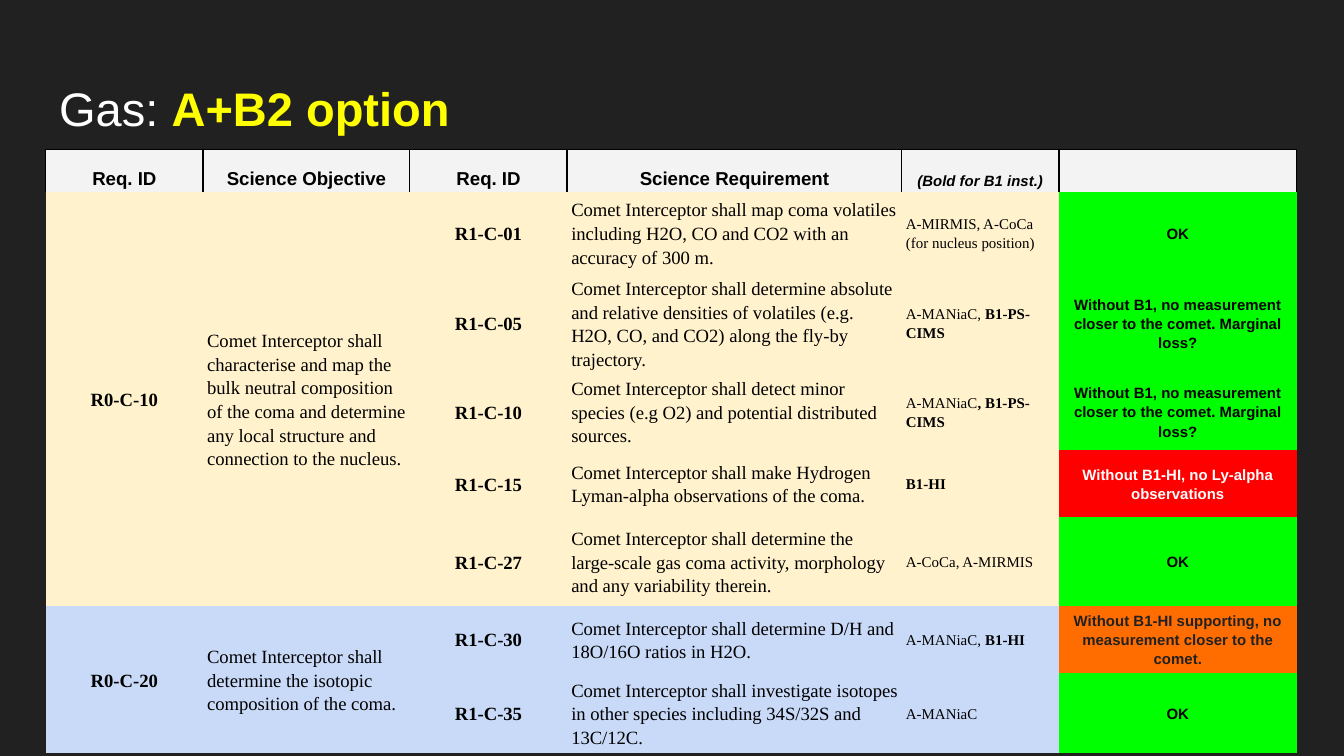
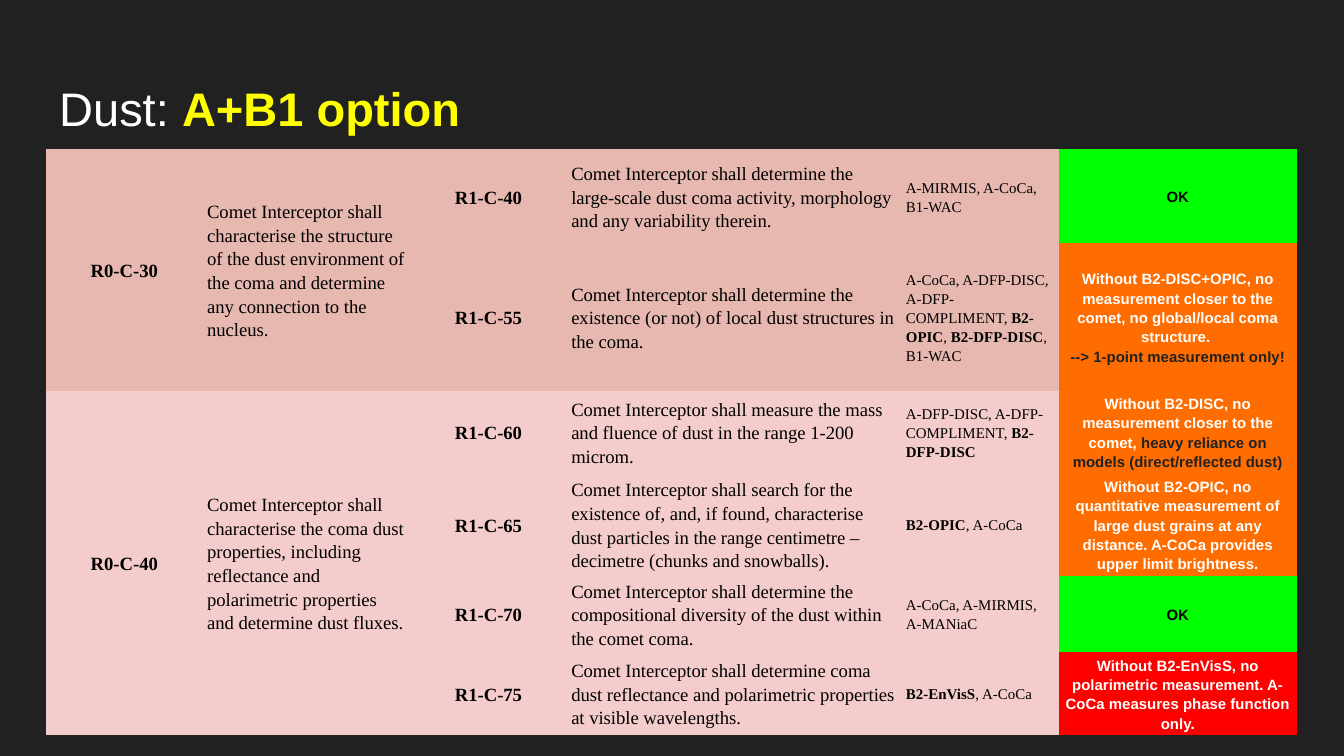
from collections import namedtuple
from dataclasses import dataclass

from lxml import etree
from pptx import Presentation
from pptx import util as u
from pptx.dml import color
from pptx.enum import text
from pptx.oxml import ns

Box = namedtuple("Box", "left top width height")
Style = namedtuple("Style", "font size bold color emphasis_bold emphasis_color align italic", defaults=(False,))
Group = namedtuple("Group", "id objective fill requirements")
Requirement = namedtuple("Requirement", "height id text instruments verdict status")

LEFT, CENTER = text.PP_ALIGN.LEFT, text.PP_ALIGN.CENTER


@dataclass(frozen=True)
class Theme:
    background: str = "212121"
    black: str = "000000"
    white: str = "FFFFFF"
    yellow: str = "FFFF00"
    header: str = "F3F3F3"
    cream: str = "FFF2CC"
    blue: str = "C9DAF8"
    clay: str = "E6B8AF"
    pink: str = "F4CCCC"
    green: str = "00FF00"
    orange: str = "FF6D01"
    red: str = "FF0000"
    sans: str = "Arial"
    serif: str = "Times New Roman"
    title_size: float = 25.2
    body_size: float = 10
    small_size: float = 8
    line_spacing: float = 1.15
    border_width: float = 0.75


THEME = Theme()
SLIDE_WIDTH = 10
SLIDE_HEIGHT = SLIDE_WIDTH * 9 / 16
TITLE_BOX = Box(0.34, 0.49, 9.32, 0.63)
TABLE_BOX = Box(0.34, 1.11, 9.31, 4.29)
COLUMN_WIDTHS = (1.17, 1.54, 1.17, 2.49, 1.17, 1.77)
HEADER_HEIGHT = 0.27
CELL_SIDE_MARGIN = 1 / 32
CELL_END_MARGIN = 1 / 48
HEADINGS = ("Req. ID", "Science Objective", "Req. ID", "Science Requirement", "(Bold for B1 inst.)", "")


def text_style(font, size, bold, align, emphasis_bold=True, ink=THEME.black, emphasis_ink=THEME.black, italic=False):
    return Style(font, size, bold, ink, emphasis_bold, emphasis_ink, align, italic)


TITLE = text_style(THEME.sans, THEME.title_size, False, LEFT, ink=THEME.white, emphasis_ink=THEME.yellow)
HEADING = text_style(THEME.sans, THEME.body_size, True, CENTER)
HEADING_NOTE = text_style(THEME.sans, THEME.small_size, True, CENTER, italic=True)
IDENTIFIER = text_style(THEME.serif, THEME.body_size, True, CENTER)
BODY = text_style(THEME.serif, THEME.body_size, False, LEFT)
INSTRUMENTS = text_style(THEME.serif, THEME.small_size, False, LEFT)
VERDICT_OK = text_style(THEME.sans, THEME.small_size, True, CENTER)
VERDICT_LOSS = VERDICT_OK._replace(color=THEME.white, emphasis_color=THEME.background)

STATUS = {
    "ok": (THEME.green, VERDICT_OK),
    "partial": (THEME.orange, VERDICT_LOSS),
    "lost": (THEME.red, VERDICT_LOSS),
}

MARGINAL = "Without B1, no measurement closer to the comet. Marginal loss?"

GAS = (
    Group(
        "R0-C-10",
        "Comet Interceptor shall characterise and map the bulk neutral composition of the coma "
        "and determine any local structure and connection to the nucleus.",
        THEME.cream,
        (
            Requirement(0.6, "R1-C-01",
                        "Comet Interceptor shall map coma volatiles including H2O, CO and CO2 "
                        "with an accuracy of 300 m.",
                        "A-MIRMIS, A-CoCa (for nucleus position)", "OK", "ok"),
            Requirement(0.66, "R1-C-05",
                        "Comet Interceptor shall determine absolute and relative densities of volatiles "
                        "(e.g. H2O, CO, and CO2) along the fly-by trajectory.",
                        "A-MANiaC, *B1-PS-CIMS*", MARGINAL, "ok"),
            Requirement(0.5, "R1-C-10",
                        "Comet Interceptor shall detect minor species (e.g O2) and potential "
                        "distributed sources.",
                        "A-MANiaC*, B1-PS-CIMS*", MARGINAL, "ok"),
            Requirement(0.5, "R1-C-15",
                        "Comet Interceptor shall make Hydrogen Lyman-alpha observations of the coma.",
                        "*B1-HI*", "Without B1-HI, no Ly-alpha observations", "lost"),
            Requirement(0.66, "R1-C-27",
                        "Comet Interceptor shall determine the large-scale gas coma activity, "
                        "morphology and any variability therein.",
                        "A-CoCa, A-MIRMIS", "OK", "ok"),
        ),
    ),
    Group(
        "R0-C-20",
        "Comet Interceptor shall determine the isotopic composition of the coma.",
        THEME.blue,
        (
            Requirement(0.5, "R1-C-30",
                        "Comet Interceptor shall determine D/H and 18O/16O ratios in H2O.",
                        "A-MANiaC, *B1-HI*",
                        "*Without B1-HI supporting, no measurement closer to the comet.*", "partial"),
            Requirement(0.6, "R1-C-35",
                        "Comet Interceptor shall investigate isotopes in other species including "
                        "34S/32S and 13C/12C.",
                        "A-MANiaC", "OK", "ok"),
        ),
    ),
)

DUST = (
    Group(
        "R0-C-30",
        "Comet Interceptor shall characterise the structure of the dust environment of the coma "
        "and determine any connection to the nucleus.",
        THEME.clay,
        (
            Requirement(0.7, "R1-C-40",
                        "Comet Interceptor shall determine the large-scale dust coma activity, "
                        "morphology and any variability therein.",
                        "A-MIRMIS, A-CoCa, B1-WAC", "OK", "ok"),
            Requirement(0.86, "R1-C-55",
                        "Comet Interceptor shall determine the existence (or not) of local dust "
                        "structures in the coma.",
                        "A-CoCa, A-DFP-DISC, A-DFP-COMPLIMENT, *B2-OPIC*, *B2-DFP-DISC*, B1-WAC",
                        "Without B2-DISC+OPIC, no measurement closer to the comet, no global/local "
                        "coma structure. \n*--> 1-point measurement only!*", "partial"),
        ),
    ),
    Group(
        "R0-C-40",
        "Comet Interceptor shall characterise the coma dust properties, including reflectance "
        "and polarimetric properties and determine dust fluxes.",
        THEME.pink,
        (
            Requirement(0.53, "R1-C-60",
                        "Comet Interceptor shall measure the mass and fluence of dust in the range "
                        "1-200 microm.",
                        "A-DFP-DISC, A-DFP-COMPLIMENT, *B2-DFP-DISC*",
                        "Without B2-DISC, no measurement closer to the comet, "
                        "*heavy reliance on models (direct/reflected dust)*", "partial"),
            Requirement(0.72, "R1-C-65",
                        "Comet Interceptor shall search for the existence of, and, if found, characterise "
                        "dust particles in the range centimetre – decimetre (chunks and snowballs).",
                        "*B2-OPIC*, A-CoCa",
                        "Without B2-OPIC, no quantitative measurement of large dust grains at any "
                        "distance. A-CoCa provides upper limit brightness.", "partial"),
            Requirement(0.53, "R1-C-70",
                        "Comet Interceptor shall determine the compositional diversity of the dust "
                        "within the comet coma.",
                        "A-CoCa, A-MIRMIS, A-MANiaC", "OK", "ok"),
            Requirement(0.59, "R1-C-75",
                        "Comet Interceptor shall determine coma dust reflectance and polarimetric "
                        "properties at visible wavelengths.",
                        "*B2-EnVisS*, A-CoCa",
                        "Without B2-EnVisS, no polarimetric measurement. A-CoCa measures phase "
                        "function only.", "lost"),
        ),
    ),
)


def rgb(value):
    return color.RGBColor.from_string(value)


def write(frame, content, style, line_spacing=None):
    for index, line in enumerate(content.split("\n")):
        paragraph = frame.paragraphs[0] if index == 0 else frame.add_paragraph()
        paragraph.alignment = style.align
        paragraph.line_spacing = line_spacing
        for position, piece in enumerate(line.split("*")):
            if not piece:
                continue
            emphasised = position % 2 == 1
            run = paragraph.add_run()
            run.text = piece
            for font in (paragraph.font, run.font):
                font.name = style.font
                font.size = u.Pt(style.size)
                font.italic = style.italic
            run.font.bold = style.emphasis_bold if emphasised else style.bold
            run.font.color.rgb = rgb(style.emphasis_color if emphasised else style.color)


def set_empty_font(cell, font):
    paragraph = cell.text_frame.paragraphs[0]._p
    properties = etree.SubElement(paragraph, ns.qn("a:endParaRPr"))
    etree.SubElement(properties, ns.qn("a:latin"), typeface=font)


def add_borders(cell, sides):
    properties = cell._tc.get_or_add_tcPr()
    for side in sides:
        line = etree.SubElement(properties, ns.qn(f"a:ln{side}"), w=str(u.Pt(THEME.border_width)))
        fill = etree.SubElement(line, ns.qn("a:solidFill"))
        etree.SubElement(fill, ns.qn("a:srgbClr"), val=THEME.black)


def fill_cell(cell, content, style, fill, anchor=text.MSO_ANCHOR.MIDDLE):
    cell.margin_left = cell.margin_right = u.Inches(CELL_SIDE_MARGIN)
    cell.margin_top = cell.margin_bottom = u.Inches(CELL_END_MARGIN)
    cell.vertical_anchor = anchor
    cell.fill.solid()
    cell.fill.fore_color.rgb = rgb(fill)
    if content:
        write(cell.text_frame, content, style, THEME.line_spacing)
    else:
        set_empty_font(cell, style.font)


def add_header(table):
    table.rows[0].height = u.Inches(HEADER_HEIGHT)
    for column, heading in enumerate(HEADINGS):
        cell = table.cell(0, column)
        add_borders(cell, "LRT")
        style = HEADING_NOTE if heading.startswith("(") else HEADING
        fill_cell(cell, heading, style, THEME.header, text.MSO_ANCHOR.BOTTOM)


def add_group(table, first_row, group):
    for row, requirement in enumerate(group.requirements, first_row):
        table.rows[row].height = u.Inches(requirement.height)
        status_fill, status_style = STATUS[requirement.status]
        leading = row == first_row
        cells = (
            (group.id if leading else "", IDENTIFIER, group.fill),
            (group.objective if leading else "", BODY, group.fill),
            (requirement.id, IDENTIFIER, group.fill),
            (requirement.text, BODY, group.fill),
            (requirement.instruments, INSTRUMENTS, group.fill),
            (requirement.verdict, status_style, status_fill),
        )
        for column, (content, style, fill) in enumerate(cells):
            fill_cell(table.cell(row, column), content, style, fill)
    last_row = first_row + len(group.requirements) - 1
    for column in (0, 1):
        table.cell(first_row, column).merge(table.cell(last_row, column))
    return last_row + 1


def add_requirements_table(slide, box, groups, with_header):
    row_count = with_header + sum(len(group.requirements) for group in groups)
    frame = slide.shapes.add_table(row_count, len(COLUMN_WIDTHS), *map(u.Inches, box))
    table = frame.table
    table.first_row = table.horz_banding = False
    style_id = table._tbl.tblPr.find(ns.qn("a:tableStyleId"))
    style_id.text = "{2D5ABB26-0587-4C30-8999-92F81FD0307C}"
    for column, width in zip(table.columns, COLUMN_WIDTHS):
        column.width = u.Inches(width)
    if with_header:
        add_header(table)
    row = int(with_header)
    for group in groups:
        row = add_group(table, row, group)


def add_title(slide, box, content):
    title = slide.shapes.title
    title.left, title.top, title.width, title.height = map(u.Inches, box)
    frame = title.text_frame
    frame.margin_left = frame.margin_right = frame.margin_top = frame.margin_bottom = u.Inches(0.1)
    frame.word_wrap = True
    frame.auto_size = text.MSO_AUTO_SIZE.NONE
    frame.vertical_anchor = text.MSO_ANCHOR.MIDDLE
    write(frame, content, TITLE)


def add_requirements_slide(presentation, title, groups, with_header):
    slide = presentation.slides.add_slide(presentation.slide_layouts.get_by_name("Title Only"))
    add_title(slide, TITLE_BOX, title)
    add_requirements_table(slide, TABLE_BOX, groups, with_header)


def main():
    presentation = Presentation()
    presentation.slide_width = u.Inches(SLIDE_WIDTH)
    presentation.slide_height = u.Inches(SLIDE_HEIGHT)
    background = presentation.slide_master.background.fill
    background.solid()
    background.fore_color.rgb = rgb(THEME.background)
    add_requirements_slide(presentation, "Gas: *A+B2 option*", GAS, True)
    add_requirements_slide(presentation, "Dust: *A+B1 option*", DUST, False)
    presentation.save("out.pptx")


if __name__ == "__main__":
    main()
